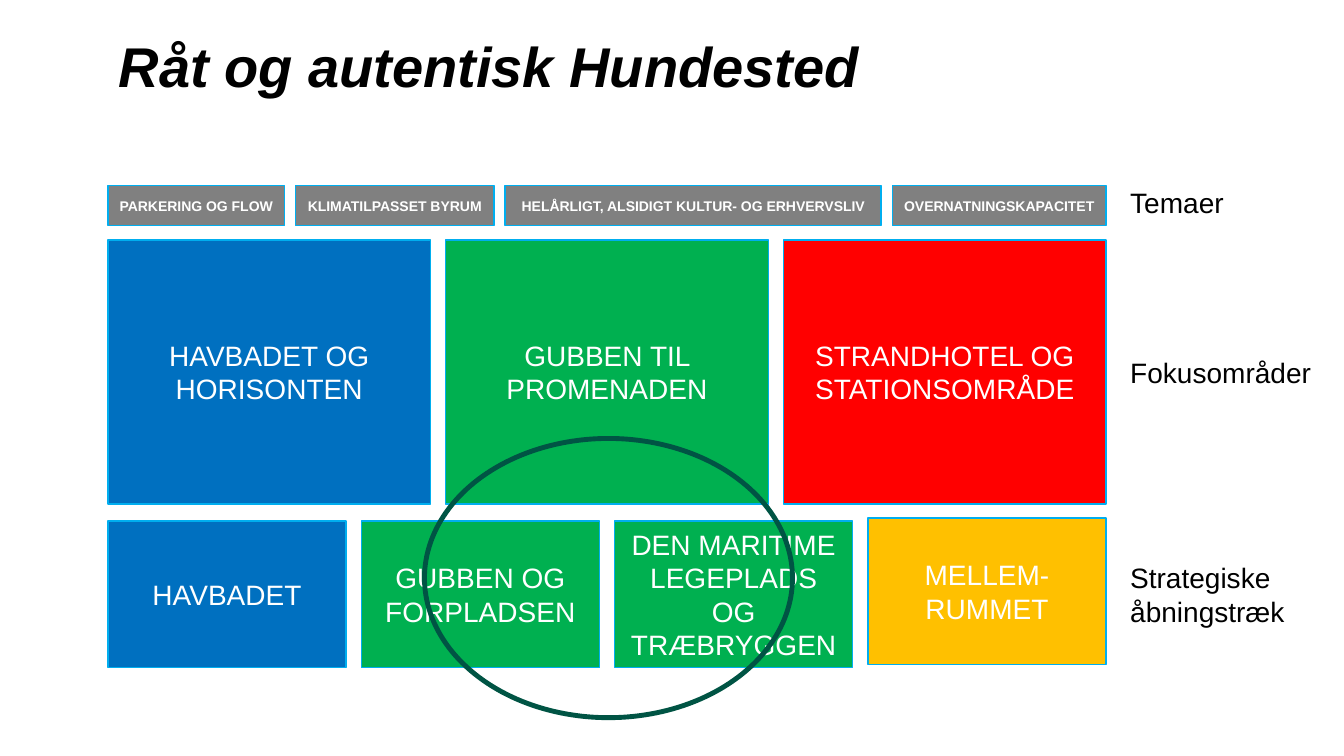
import pptx
import pptx.dml.color
import pptx.enum.shapes
import pptx.enum.text
import pptx.util

Inches = pptx.util.Inches
Pt = pptx.util.Pt
SHAPE = pptx.enum.shapes.MSO_SHAPE
ALIGN = pptx.enum.text.PP_ALIGN
ANCHOR = pptx.enum.text.MSO_ANCHOR

GRID_LEFT, GRID_WIDTH = 1.07, 9.9
LABEL_LEFT = 11.21
GREY, BLUE, GREEN, RED, YELLOW = "808080", "0070C0", "00B050", "FF0000", "FFC000"
BORDER, RING, BLACK, WHITE = "00AEEF", "005444", "000000", "FFFFFF"

# (text, fill, relative width)
THEMES = [
    ("PARKERING OG FLOW", GREY, 1.75),
    ("KLIMATILPASSET BYRUM", GREY, 1.97),
    ("HELÅRLIGT, ALSIDIGT KULTUR- OG ERHVERVSLIV", GREY, 3.73),
    ("OVERNATNINGSKAPACITET", GREY, 2.12),
]
FOCUS_AREAS = [
    ("HAVBADET OG HORISONTEN", BLUE, 1),
    ("GUBBEN TIL PROMENADEN", GREEN, 1),
    ("STRANDHOTEL OG STATIONSOMRÅDE", RED, 1),
]
OPENING_MOVES = [
    ("HAVBADET", BLUE, 1),
    ("GUBBEN OG FORPLADSEN", GREEN, 1),
    ("DEN MARITIME LEGEPLADS OG TRÆBRYGGEN", GREEN, 1),
]
LAST_MOVE = ("MELLEM-RUMMET", YELLOW, 1)


def rgb(color):
    return pptx.dml.color.RGBColor.from_string(color)


def write(tf, text, size, color, bold=False, italic=False, align=ALIGN.LEFT):
    tf.text = text
    for p in tf.paragraphs:
        p.alignment = align
        for r in p.runs:
            r.font.name = "Arial"
            r.font.size = Pt(size)
            r.font.bold = bold
            r.font.italic = italic
            r.font.color.rgb = rgb(color)


def add_outlined(s, kind, box, line, width):
    sp = s.shapes.add_shape(kind, *map(Inches, box))
    sp.shadow.inherit = False
    sp.fill.background()
    sp.line.color.rgb = rgb(line)
    sp.line.width = Pt(width)
    return sp


def add_tile(s, text, fill, box, size, bold):
    sp = add_outlined(s, SHAPE.RECTANGLE, box, BORDER, 1)
    sp.fill.solid()
    sp.fill.fore_color.rgb = rgb(fill)
    tf = sp.text_frame
    tf.word_wrap = True
    tf.vertical_anchor = ANCHOR.MIDDLE
    tf.margin_left = tf.margin_right = Inches(0.11)
    write(tf, text, size, WHITE, bold, align=ALIGN.CENTER)


def add_row(s, tiles, top, height, gap=0.15, width=GRID_WIDTH, size=20, bold=False):
    """Share the row's width among the tiles by their relative widths."""
    unit = (width - gap * (len(tiles) - 1)) / sum(t[2] for t in tiles)
    left = GRID_LEFT
    for text, fill, share in tiles:
        add_tile(s, text, fill, (left, top, unit * share, height), size, bold)
        left += unit * share + gap


def add_text(s, text, box, size, wrap=False, **style):
    tf = s.shapes.add_textbox(*map(Inches, box)).text_frame
    tf.margin_left = tf.margin_right = tf.margin_top = tf.margin_bottom = 0
    tf.word_wrap = wrap
    write(tf, text, size, BLACK, **style)
    return tf


def main():
    prs = pptx.Presentation()
    prs.slide_width, prs.slide_height = Inches(13.33), Inches(7.5)
    s = prs.slides.add_slide(prs.slide_layouts[6])

    title = add_text(s, "Råt og autentisk Hundested", (1.18, 0.39, 11.5, 1.45), 40,
                     wrap=True, bold=True, italic=True)
    title.paragraphs[0].line_spacing = 0.9

    add_row(s, THEMES, 1.84, 0.4, gap=0.11, size=10, bold=True)
    add_row(s, FOCUS_AREAS, 2.38, 2.62)
    move_width = (GRID_WIDTH - 3 * 0.15) / 4
    add_row(s, OPENING_MOVES, 5.17, 1.45, width=GRID_WIDTH - move_width - 0.15)
    last_left = GRID_LEFT + GRID_WIDTH - move_width
    add_tile(s, LAST_MOVE[0], LAST_MOVE[1], (last_left, 5.14, move_width, 1.45), 20, False)

    for text, top, width, height in [
        ("Temaer", 1.84, 0.93, 0.34),
        ("Fokusområder", 3.53, 1.81, 0.34),
        ("Strategiske\nåbningstræk", 5.56, 1.54, 0.67),
    ]:
        add_text(s, text, (LABEL_LEFT, top, width, height), 20)

    add_outlined(s, SHAPE.OVAL, (4.21, 4.35, 3.65, 2.77), RING, 3.5)
    prs.save("out.pptx")


if __name__ == "__main__":
    main()
